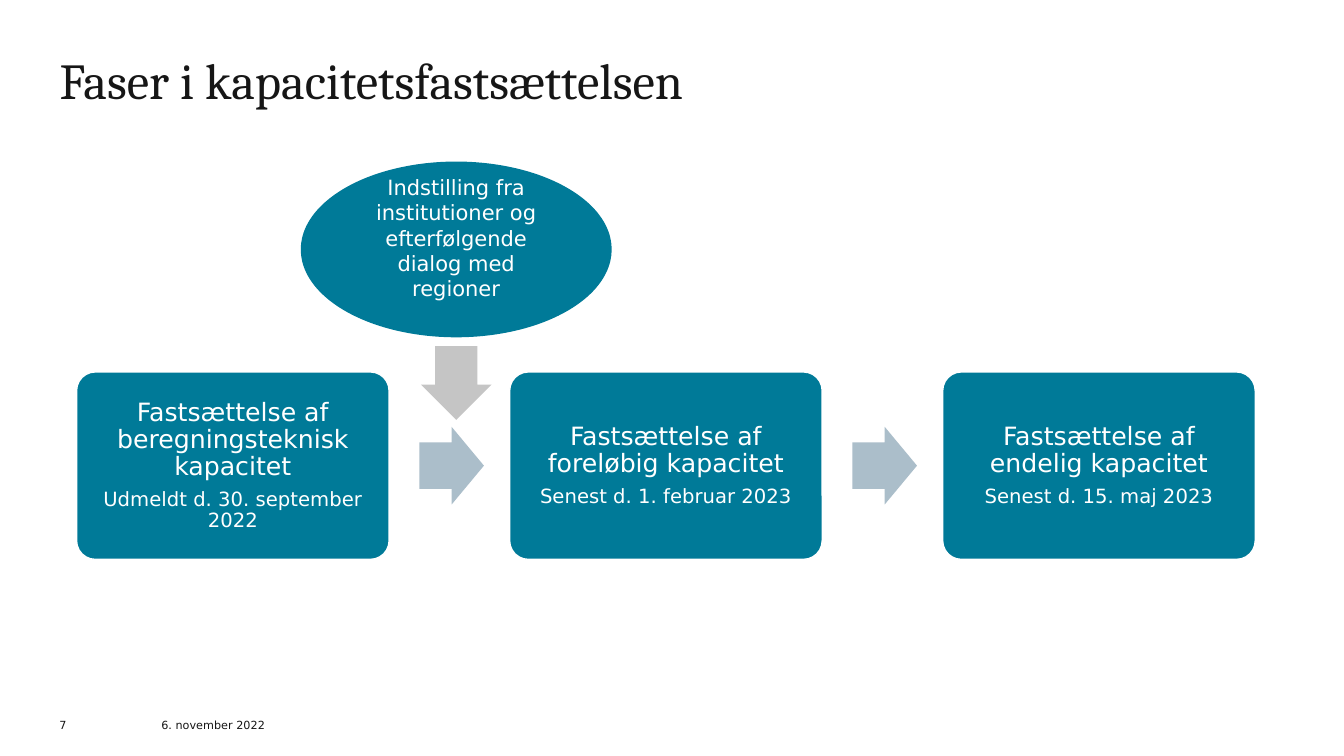
import dataclasses

import pptx
import pptx.dml.color
import pptx.enum.shapes
import pptx.enum.text
import pptx.util

SHAPE = pptx.enum.shapes.MSO_SHAPE
ALIGN = pptx.enum.text.PP_ALIGN
ANCHOR = pptx.enum.text.MSO_ANCHOR
WIDTH, HEIGHT = 13.33, 7.5


@dataclasses.dataclass(frozen=True)
class Theme:
    ink: str = "161616"
    paper: str = "FFFFFF"
    teal: str = "007A98"
    mist: str = "ABBECA"
    grey: str = "C5C5C5"
    heading_font: str = "Cambria"
    body_font: str = "DejaVu Sans"
    title_size: int = 36
    phase_size: int = 18
    input_size: int = 15
    date_size: int = 14
    footer_size: int = 8


THEME = Theme()
PHASES = [
    ("Fastsættelse af beregningsteknisk kapacitet", "Udmeldt d. 30. september 2022"),
    ("Fastsættelse af foreløbig kapacitet", "Senest d. 1. februar 2023"),
    ("Fastsættelse af endelig kapacitet", "Senest d. 15. maj 2023"),
]


def color(value):
    return pptx.dml.color.RGBColor.from_string(value)


def inches(box):
    return [pptx.util.Inches(length) for length in box]


def set_frame(frame, anchor, insets):
    frame.word_wrap = True
    frame.auto_size = pptx.enum.text.MSO_AUTO_SIZE.NONE
    frame.vertical_anchor = anchor
    frame.margin_left, frame.margin_top, frame.margin_right, frame.margin_bottom = inches(insets)


def write(para, text, size, tint, font=THEME.body_font, align=ALIGN.LEFT):
    para.alignment = align
    span = para.add_run()
    span.text = text
    span.font.size = pptx.util.Pt(size)
    span.font.name = font
    span.font.color.rgb = color(tint)


def add_block(page, kind, box, fill, line=None):
    block = page.shapes.add_shape(kind, *inches(box))
    block.shadow.inherit = False
    block.fill.solid()
    block.fill.fore_color.rgb = color(fill)
    if line:
        block.line.color.rgb = color(line)
        block.line.width = pptx.util.Pt(1)
    else:
        block.line.fill.background()
    return block


def add_title(page, box, text):
    title = page.shapes.title
    title.left, title.top, title.width, title.height = inches(box)
    set_frame(title.text_frame, ANCHOR.TOP, (0, 0, 0, 0))
    para = title.text_frame.paragraphs[0]
    para.line_spacing = 0.83
    write(para, text, THEME.title_size, THEME.ink, THEME.heading_font)


def add_footer(page, box, number, date):
    left, top, width, height = box
    date_left = left + 1.01
    for text, start, end in ((number, left, left + 0.3), (date, date_left, left + width)):
        label = page.shapes.add_textbox(*inches((start, top, end - start, height)))
        set_frame(label.text_frame, ANCHOR.BOTTOM, (0, 0, 0, 0))
        write(label.text_frame.paragraphs[0], text, THEME.footer_size, THEME.ink)


def add_arrow(page, box, fill, rotation=0):
    arrow = add_block(page, SHAPE.RIGHT_ARROW, box, fill)
    arrow.adjustments[0], arrow.adjustments[1] = 0.6, 0.5
    arrow.rotation = rotation


def add_phase(page, box, name, date):
    card = add_block(page, SHAPE.ROUNDED_RECTANGLE, box, THEME.teal, THEME.paper)
    card.adjustments[0] = 0.1
    frame = card.text_frame
    set_frame(frame, ANCHOR.MIDDLE, (0.07, 0.07, 0.07, 0.07))
    lines = ((name, THEME.phase_size), (date, THEME.date_size))
    for index, (text, size) in enumerate(lines):
        para = frame.add_paragraph() if index else frame.paragraphs[0]
        para.line_spacing = 0.9
        para.space_after = pptx.util.Pt(round(size * 0.35))
        write(para, text, size, THEME.paper, align=ALIGN.CENTER)


def add_process(page, box):
    left, top, width, height = box
    card_width, arrow_height = 3.1, 0.77
    pitch = (width - card_width) / (len(PHASES) - 1)
    for index, (name, date) in enumerate(PHASES):
        start = left + index * pitch
        add_phase(page, (start, top, card_width, height), name, date)
        if index < len(PHASES) - 1:
            arrow_top = top + (height - arrow_height) / 2
            add_arrow(page, (start + card_width + 0.3, arrow_top, 0.64, arrow_height), THEME.mist)


def add_input(page, box, text):
    left, top, width, height = box
    oval = add_block(page, SHAPE.OVAL, box, THEME.teal, THEME.teal)
    set_frame(oval.text_frame, ANCHOR.MIDDLE, (0.1, 0.05, 0.1, 0.28))
    write(oval.text_frame.paragraphs[0], text, THEME.input_size, THEME.paper, align=ALIGN.CENTER)
    length, breadth = 0.73, 0.7
    arrow_left = left + (width - length) / 2
    add_arrow(page, (arrow_left, top + height + 0.11, length, breadth), THEME.grey, 90)


def main():
    deck = pptx.Presentation()
    deck.slide_width, deck.slide_height = inches((WIDTH, HEIGHT))
    page = deck.slides.add_slide(deck.slide_layouts[5])
    page.background.fill.solid()
    page.background.fill.fore_color.rgb = color(THEME.paper)
    margin = 0.59
    add_title(page, (margin, margin, WIDTH * 0.76, 1.02), "Faser i kapacitetsfastsættelsen")
    add_footer(page, (margin, 7.06, 2.4, 0.2), "7", "6. november 2022")
    add_process(page, (0.76, 3.69, 11.69, 1.86))
    add_input(
        page,
        (2.99, 1.61, 3.07, 1.73),
        "Indstilling fra institutioner og efterfølgende dialog med regioner",
    )
    deck.save("out.pptx")


if __name__ == "__main__":
    main()
